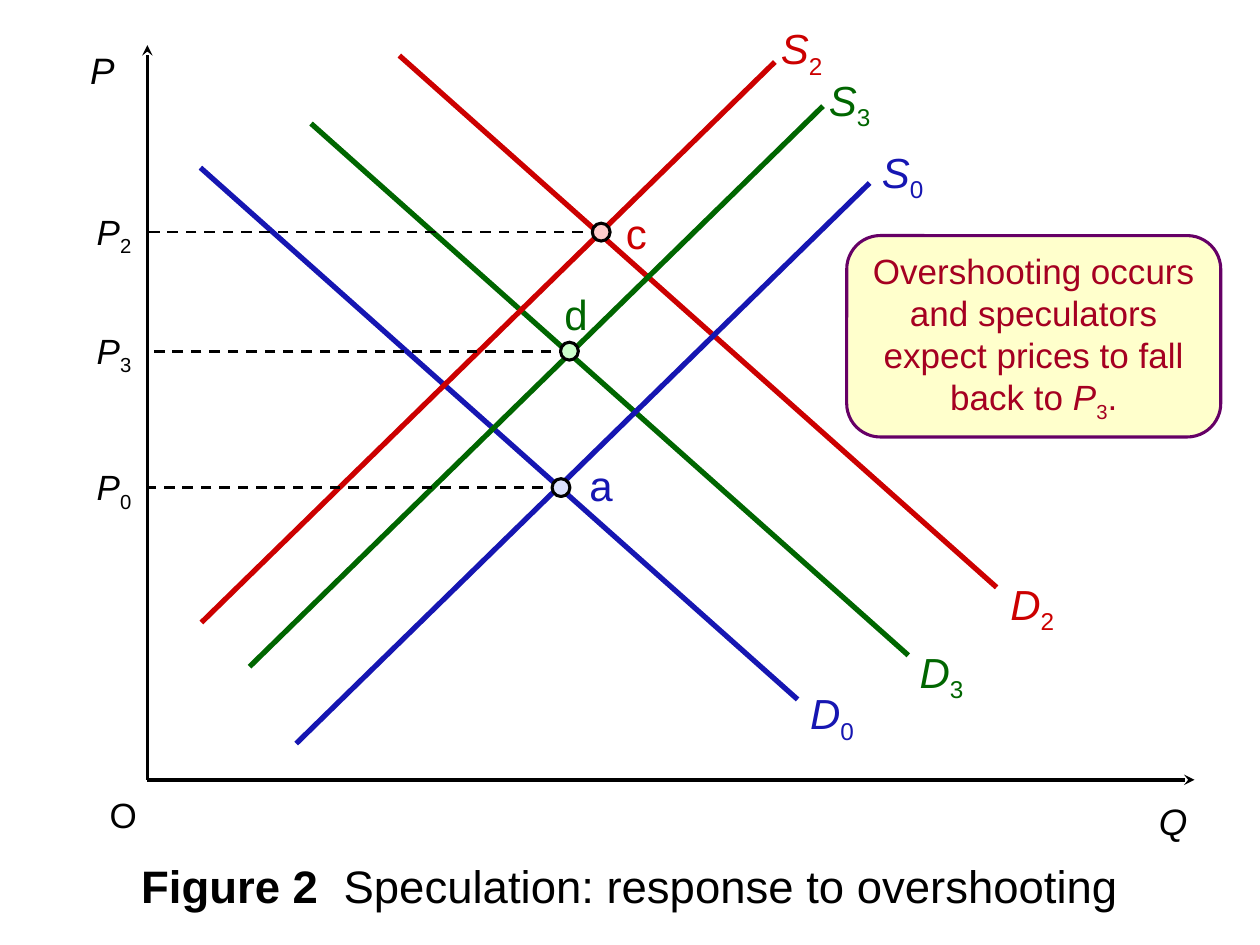
"""Build a supply and demand slide showing the response to price overshooting."""

from lxml.etree import SubElement
from pptx import Presentation
from pptx.dml.color import RGBColor
from pptx.enum.dml import MSO_LINE
from pptx.enum.shapes import MSO_CONNECTOR, MSO_SHAPE
from pptx.enum.text import MSO_ANCHOR, MSO_AUTO_SIZE, PP_ALIGN
from pptx.oxml.ns import qn
from pptx.util import Cm, Pt

FONT = "Arial"
BLACK = RGBColor(0x00, 0x00, 0x00)
BLUE = RGBColor(0x16, 0x16, 0xB2)
GREEN = RGBColor(0x00, 0x66, 0x00)
RED = RGBColor(0xCC, 0x00, 0x00)
PALE_BLUE = RGBColor(0xDC, 0xE1, 0xFF)
PALE_GREEN = RGBColor(0xCC, 0xFF, 0xCC)
PALE_RED = RGBColor(0xFF, 0xCC, 0xCC)
CREAM = RGBColor(0xFF, 0xFF, 0xCC)
PURPLE = RGBColor(0x66, 0x00, 0x66)
CRIMSON = RGBColor(0xA5, 0x00, 0x21)

TITLE = [("Figure 2 ", "bold"), (" Speculation: response to overshooting", "")]
CALLOUT = [
    ("Overshooting occurs and speculators expect prices to fall back to ", ""),
    ("P", "italic"),
    ("3", "subscript"),
    (".", ""),
]
ORIGIN = (2.97, 15.72)
AXIS_ENDS = [(2.97, 0.91), (24.08, 15.72)]
AXIS_LABELS = [
    ("P", "italic", 21, (1.57, 0.84, 1.19, 1.17)),
    ("Q", "italic", 21, (23.11, 15.98, 1.32, 1.17)),
    ("O", "", 20, (1.96, 15.88, 1.07, 1.12)),
]
CURVE_SPANS = {"D": (12.04, 10.72), "S": (11.56, -11.3)}
LABEL_WIDTHS = {"D": 1.45, "S": 1.4}
CURVES = [
    ("D", "0", BLUE, (4.04, 3.38), (16.08, 13.74)),
    ("D", "3", GREEN, (6.27, 2.49), (18.29, 12.9)),
    ("D", "2", RED, (8.05, 1.12), (20.12, 11.53)),
    ("S", "0", BLUE, (5.97, 14.99), (17.53, 2.82)),
    ("S", "3", GREEN, (5.03, 13.44), (16.46, 1.37)),
    ("S", "2", RED, (4.06, 12.55), (15.49, 0.33)),
]
EQUILIBRIA = [
    ("a", "0", BLUE, PALE_BLUE, (11.31, 9.83), (11.63, 9.14)),
    ("d", "3", GREEN, PALE_GREEN, (11.48, 7.08), (11.13, 5.69)),
    ("c", "2", RED, PALE_RED, (12.12, 4.68), (12.37, 4.06)),
]
DOT_SIZE = 0.36


def write_runs(paragraph, runs, size, color):
    for text, style in runs:
        run = paragraph.add_run()
        run.text = text
        font = run.font
        font.name = FONT
        font.size = Pt(size)
        font.color.rgb = color
        font.bold = style == "bold"
        font.italic = style == "italic"
        if style == "subscript":
            run._r.get_or_add_rPr().set("baseline", "-25000")


def add_label(slide, box, runs, size, color):
    text_frame = slide.shapes.add_textbox(*map(Cm, box)).text_frame
    text_frame.word_wrap = False
    text_frame.auto_size = MSO_AUTO_SIZE.SHAPE_TO_FIT_TEXT
    write_runs(text_frame.paragraphs[0], runs, size, color)


def add_line(slide, start, end, color, width, dashed=False, arrow=False):
    connector = slide.shapes.add_connector(MSO_CONNECTOR.STRAIGHT, *map(Cm, start + end))
    connector.line.color.rgb = color
    connector.line.width = Pt(width)
    if dashed:
        connector.line.dash_style = MSO_LINE.DASH
    if arrow:
        SubElement(connector.line._get_or_add_ln(), qn("a:tailEnd"), type="stealth")
    SubElement(connector._element.spPr, qn("a:effectLst"))


def add_outlined_shape(slide, preset, box, fill, outline):
    shape = slide.shapes.add_shape(preset, *map(Cm, box))
    shape.shadow.inherit = False
    shape.fill.solid()
    shape.fill.fore_color.rgb = fill
    shape.line.color.rgb = outline
    shape.line.width = Pt(1.75)
    return shape


def add_title(slide):
    title = slide.shapes.title
    title.left, title.top, title.width, title.height = map(Cm, (0, 17.04, 25.4, 1.6))
    title.text_frame.vertical_anchor = MSO_ANCHOR.MIDDLE
    paragraph = title.text_frame.paragraphs[0]
    paragraph.alignment = PP_ALIGN.CENTER
    write_runs(paragraph, TITLE, 26, BLACK)


def add_axes(slide):
    for end in AXIS_ENDS:
        add_line(slide, ORIGIN, end, BLACK, 2, arrow=True)
    for text, style, size, box in AXIS_LABELS:
        add_label(slide, box, [(text, style)], size, BLACK)


def add_curves(slide):
    for letter, number, color, start, label in CURVES:
        end = tuple(a + b for a, b in zip(start, CURVE_SPANS[letter]))
        add_line(slide, start, end, color, 3)
        runs = [(letter, "italic"), (number, "subscript")]
        add_label(slide, (*label, LABEL_WIDTHS[letter], 1.3), runs, 24, color)


def add_equilibria(slide):
    for letter, number, color, fill, (x, y), label in EQUILIBRIA:
        add_line(slide, (x, y), (ORIGIN[0], y), BLACK, 1.5, dashed=True)
        runs = [("P", "italic"), (number, "subscript")]
        add_label(slide, (1.7, y - 0.57, 1.24, 1.12), runs, 20, BLACK)
        add_label(slide, (*label, 0.99, 1.3), [(letter, "")], 24, color)
        dot = (x - DOT_SIZE / 2, y - DOT_SIZE / 2, DOT_SIZE, DOT_SIZE)
        add_outlined_shape(slide, MSO_SHAPE.OVAL, dot, fill, BLACK)


def add_callout(slide):
    box = (17.07, 4.75, 7.54, 4.06)
    shape = add_outlined_shape(
        slide, MSO_SHAPE.FLOWCHART_ALTERNATE_PROCESS, box, CREAM, PURPLE
    )
    text_frame = shape.text_frame
    text_frame.word_wrap = True
    text_frame.vertical_anchor = MSO_ANCHOR.MIDDLE
    paragraph = text_frame.paragraphs[0]
    paragraph.alignment = PP_ALIGN.CENTER
    write_runs(paragraph, CALLOUT, 20, CRIMSON)


def main():
    presentation = Presentation()
    presentation.slide_width, presentation.slide_height = Cm(25.4), Cm(19.05)
    slide = presentation.slides.add_slide(presentation.slide_layouts[5])
    add_title(slide)
    add_axes(slide)
    add_curves(slide)
    add_equilibria(slide)
    add_callout(slide)
    presentation.save("out.pptx")


if __name__ == "__main__":
    main()
